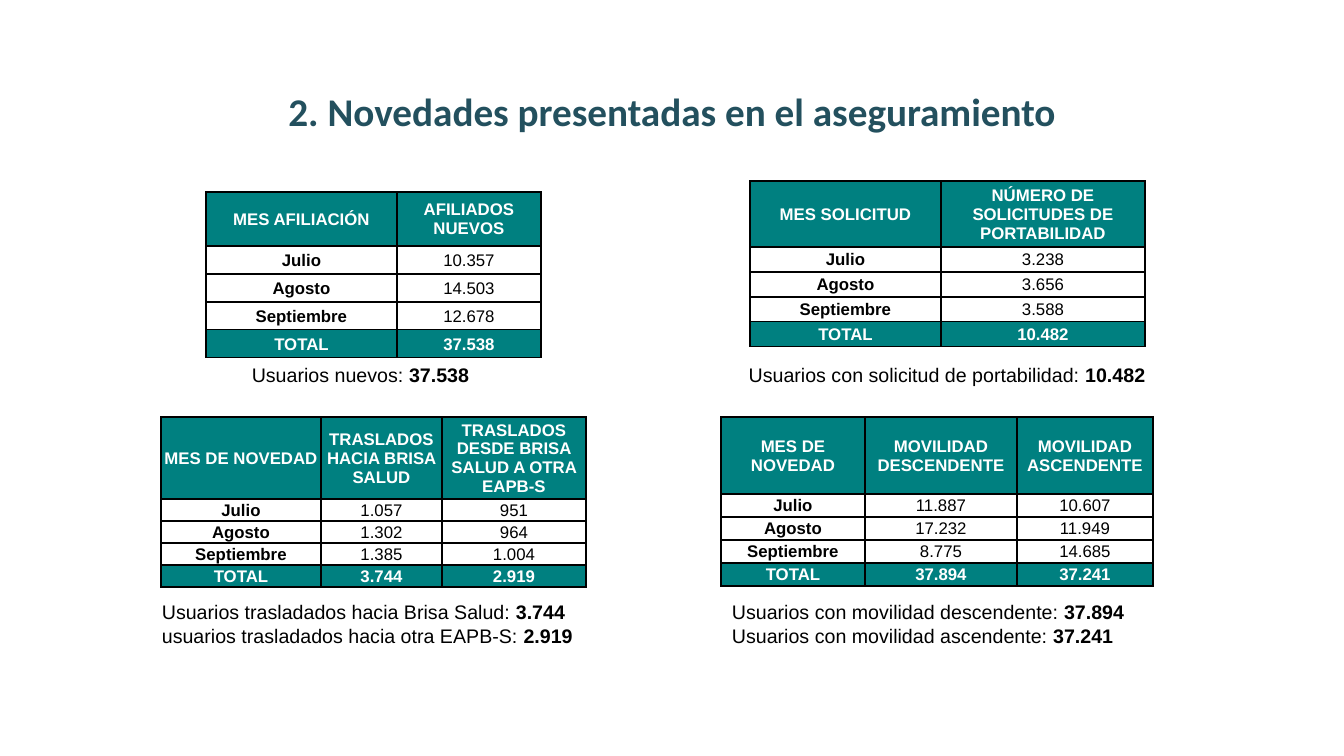
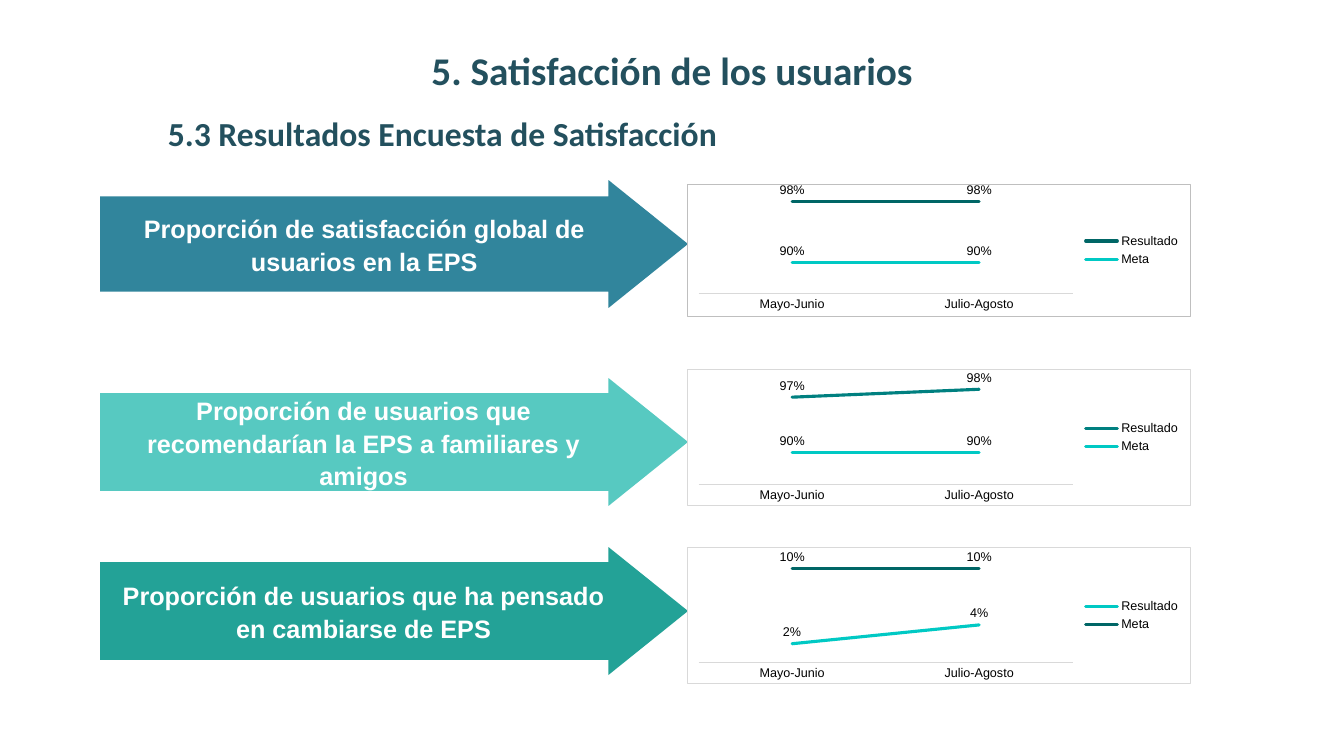
import pptx
import pptx.util
import pptx.dml.color
import pptx.chart.data
import pptx.enum.chart
import pptx.enum.shapes
import pptx.enum.text
import pptx.oxml
import pptx.oxml.ns

EMU_PER_PX = 12192000 / 1344
COLORS = {
    "title": "23505E", "header": "008080", "black": "000000", "white": "FFFFFF",
    "blue": "31859C", "aqua": "57C9C1", "green": "23A297",
    "deep": "006666", "bright": "00C9C4", "axis": "D9D9D9", "frame": "BFBFBF",
}
Pt = pptx.util.Pt
CENTER = pptx.enum.text.PP_ALIGN.CENTER
LEFT = pptx.enum.text.PP_ALIGN.LEFT
MIDDLE = pptx.enum.text.MSO_ANCHOR.MIDDLE
TITLE_STYLE = {"font_name": "Calibri", "color": "title", "bold": True}
NS = pptx.oxml.ns.nsdecls("a", "c")


def px(*lengths):
    return [pptx.util.Emu(round(n * EMU_PER_PX)) for n in lengths]


def style(paragraph, size, font_name="Arial", color="black", bold=None, align=CENTER):
    paragraph.alignment = align
    paragraph.font.size = Pt(size)
    paragraph.font.name = font_name
    paragraph.font.bold = bold
    paragraph.font.color.rgb = pptx.dml.color.RGBColor.from_string(COLORS[color])


presentation = pptx.Presentation()
presentation.slide_width, presentation.slide_height = px(1344, 756)
blank = presentation.slide_layouts[6]
news = presentation.slides.add_slide(blank)
survey = presentation.slides.add_slide(blank)

headings = [
    (news, (268, 82, 808, 57), "2. Novedades presentadas en el aseguramiento", 28, CENTER),
    (survey, (268, 41, 808, 57), "5. Satisfacción de los usuarios", 28, CENTER),
    (survey, (158, 108, 708, 50), "5.3 Resultados Encuesta de Satisfacción", 24, LEFT),
]
for slide, box, wording, size, align in headings:
    heading = slide.shapes.add_textbox(*px(*box)).text_frame
    heading.word_wrap = True
    heading.text = wording
    style(heading.paragraphs[0], size, align=align, **TITLE_STYLE)

captions = [
    ((181, 358, 359, 34), CENTER, [("Usuarios nuevos: ", "37.538")]),
    ((686, 358, 522, 34), CENTER, [("Usuarios con solicitud de portabilidad: ", "10.482")]),
    ((152, 595, 457, 57), LEFT, [("Usuarios trasladados hacia Brisa Salud: ", "3.744"),
                                 ("usuarios trasladados hacia otra EAPB-S: ", "2.919")]),
    ((722, 595, 431, 57), LEFT, [("Usuarios con movilidad descendente: ", "37.894"),
                                 ("Usuarios con movilidad ascendente: ", "37.241")]),
]
for box, align, lines in captions:
    caption = news.shapes.add_textbox(*px(*box)).text_frame
    caption.word_wrap = True
    for index, (label, total) in enumerate(lines):
        line = caption.add_paragraph() if index else caption.paragraphs[0]
        line.add_run().text = label
        amount = line.add_run()
        amount.text = total
        amount.font.bold = True
        style(line, 14, align=align)

tables = [
    ((206, 192), (191, 144), 54, 28, [
        ("MES AFILIACIÓN", "AFILIADOS NUEVOS"),
        ("Julio", "10.357"),
        ("Agosto", "14.503"),
        ("Septiembre", "12.678"),
        ("TOTAL", "37.538")]),
    ((750, 181), (191, 204), 66, 25, [
        ("MES SOLICITUD", "NÚMERO DE SOLICITUDES DE PORTABILIDAD"),
        ("Julio", "3.238"),
        ("Agosto", "3.656"),
        ("Septiembre", "3.588"),
        ("TOTAL", "10.482")]),
    ((161, 417), (160, 121, 144), 82, 22, [
        ("MES DE NOVEDAD", "TRASLADOS HACIA BRISA SALUD",
         "TRASLADOS DESDE BRISA SALUD A OTRA EAPB-S"),
        ("Julio", "1.057", "951"),
        ("Agosto", "1.302", "964"),
        ("Septiembre", "1.385", "1.004"),
        ("TOTAL", "3.744", "2.919")]),
    ((721, 417), (144, 152, 136), 77, 23, [
        ("MES DE NOVEDAD", "MOVILIDAD DESCENDENTE", "MOVILIDAD ASCENDENTE"),
        ("Julio", "11.887", "10.607"),
        ("Agosto", "17.232", "11.949"),
        ("Septiembre", "8.775", "14.685"),
        ("TOTAL", "37.894", "37.241")]),
]
for corner, widths, header_height, row_height, rows in tables:
    heights = [header_height] + [row_height] * (len(rows) - 1)
    table = news.shapes.add_table(
        len(rows), len(widths), *px(*corner, sum(widths), sum(heights))).table
    table.horz_banding = False
    for column, width in zip(table.columns, px(*widths)):
        column.width = width
    for r, (row, height) in enumerate(zip(rows, px(*heights))):
        table.rows[r].height = height
        banner = r in (0, len(rows) - 1)
        for c, wording in enumerate(row):
            cell = table.cell(r, c)
            cell.margin_left, cell.margin_right, cell.margin_top, cell.margin_bottom = px(1, 1, 1, 0)
            cell.vertical_anchor = MIDDLE
            properties = cell._tc.get_or_add_tcPr()
            for side in "LRTB":
                properties.append(pptx.oxml.parse_xml(
                    f'<a:ln{side} {NS} w="12700"><a:solidFill><a:srgbClr val="{COLORS["black"]}"/>'
                    f'</a:solidFill></a:ln{side}>'))
            cell.fill.solid()
            cell.fill.fore_color.rgb = pptx.dml.color.RGBColor.from_string(
                COLORS["header" if banner else "white"])
            cell.text = wording
            style(cell.text_frame.paragraphs[0], 12,
                  color="white" if banner else "black", bold=banner or c == 0)

indicators = [
    ("Proporción de satisfacción global de usuarios en la EPS", "blue", 180, 0.745,
     183, 134, (185, 294), (0.86, 1), "frame",
     [("Resultado", (0.98, 0.98), "deep"), ("Meta", (0.9, 0.9), "bright")]),
    ("Proporción de usuarios que recomendarían la EPS a familiares y amigos", "aqua", 378, 0.765,
     369, 137, (373, 485), (0.86, 1), "axis",
     [("Resultado", (0.97, 0.98), "header"), ("Meta", (0.9, 0.9), "bright")]),
    ("Proporción de usuarios que ha pensado en cambiarse de EPS", "green", 547, 0.765,
     547, 137, (549, 663), (0, 0.12), "axis",
     [("Resultado", (0.02, 0.04), "bright"), ("Meta", (0.1, 0.1), "deep")]),
]
chart_left, chart_width, plot_left, plot_width = 687, 504, 698, 375
for (question, arrow_color, arrow_top, shaft, chart_top, chart_height,
     (plot_top, plot_bottom), (low, high), border, series_data) in indicators:
    arrow = survey.shapes.add_shape(
        pptx.enum.shapes.MSO_SHAPE.RIGHT_ARROW, *px(100, arrow_top, 588, 128))
    arrow.adjustments[0], arrow.adjustments[1] = shaft, 0.622
    arrow.shadow.inherit = False
    arrow.fill.solid()
    arrow.fill.fore_color.rgb = pptx.dml.color.RGBColor.from_string(COLORS[arrow_color])
    arrow.line.fill.background()
    arrow.text_frame.word_wrap = True
    arrow.text_frame.vertical_anchor = MIDDLE
    arrow.text_frame.text = question
    style(arrow.text_frame.paragraphs[0], 18, color="white", bold=True)
    arrow.text_frame.paragraphs[0].line_spacing = 1.07

    data = pptx.chart.data.CategoryChartData(number_format="0%")
    data.categories = ["Mayo-Junio", "Julio-Agosto"]
    for name, values, _ in series_data:
        data.add_series(name, values)
    chart = survey.shapes.add_chart(
        pptx.enum.chart.XL_CHART_TYPE.LINE,
        *px(chart_left, chart_top, chart_width, chart_height), data).chart
    chart.has_title = False
    chart.font.size = Pt(9)
    chart.font.name = "Arial"
    chart.font.color.rgb = pptx.dml.color.RGBColor.from_string(COLORS["black"])
    chart.has_legend = True
    chart.legend.position = pptx.enum.chart.XL_LEGEND_POSITION.RIGHT
    chart.legend.include_in_layout = False
    chart.value_axis.visible = False
    chart.value_axis.has_major_gridlines = False
    chart.value_axis.minimum_scale, chart.value_axis.maximum_scale = low, high
    chart.category_axis.major_tick_mark = pptx.enum.chart.XL_TICK_MARK.NONE
    chart.category_axis.format.line.width = Pt(0.75)
    chart.category_axis.format.line.color.rgb = pptx.dml.color.RGBColor.from_string(COLORS["axis"])

    plot = chart.plots[0]
    plot.vary_by_categories = False
    plot.has_data_labels = True
    plot.data_labels.show_value = True
    plot.data_labels.number_format = "0%"
    plot.data_labels.number_format_is_linked = False
    plot.data_labels.position = pptx.enum.chart.XL_LABEL_POSITION.ABOVE
    for series, (_, _, line_color) in zip(plot.series, series_data):
        series.smooth = False
        series.format.line.width = Pt(2.25)
        series.format.line.color.rgb = pptx.dml.color.RGBColor.from_string(COLORS[line_color])
    for line in plot._element.xpath("c:ser/c:spPr/a:ln"):
        line.set("cap", "rnd")

    plot_area = chart._chartSpace.chart.plotArea
    for layout in plot_area.xpath("c:layout"):
        plot_area.remove(layout)
    plot_area.insert(0, pptx.oxml.parse_xml(
        f'<c:layout {NS}><c:manualLayout><c:layoutTarget val="inner"/>'
        '<c:xMode val="edge"/><c:yMode val="edge"/>'
        f'<c:x val="{(plot_left - chart_left) / chart_width:.3f}"/>'
        f'<c:y val="{(plot_top - chart_top) / chart_height:.3f}"/>'
        f'<c:w val="{plot_width / chart_width:.3f}"/>'
        f'<c:h val="{(plot_bottom - plot_top) / chart_height:.3f}"/>'
        '</c:manualLayout></c:layout>'))
    chart._chartSpace.chart.addnext(pptx.oxml.parse_xml(
        f'<c:spPr {NS}><a:solidFill><a:srgbClr val="{COLORS["white"]}"/></a:solidFill>'
        f'<a:ln w="9525"><a:solidFill><a:srgbClr val="{COLORS[border]}"/></a:solidFill></a:ln></c:spPr>'))

presentation.save("out.pptx")
